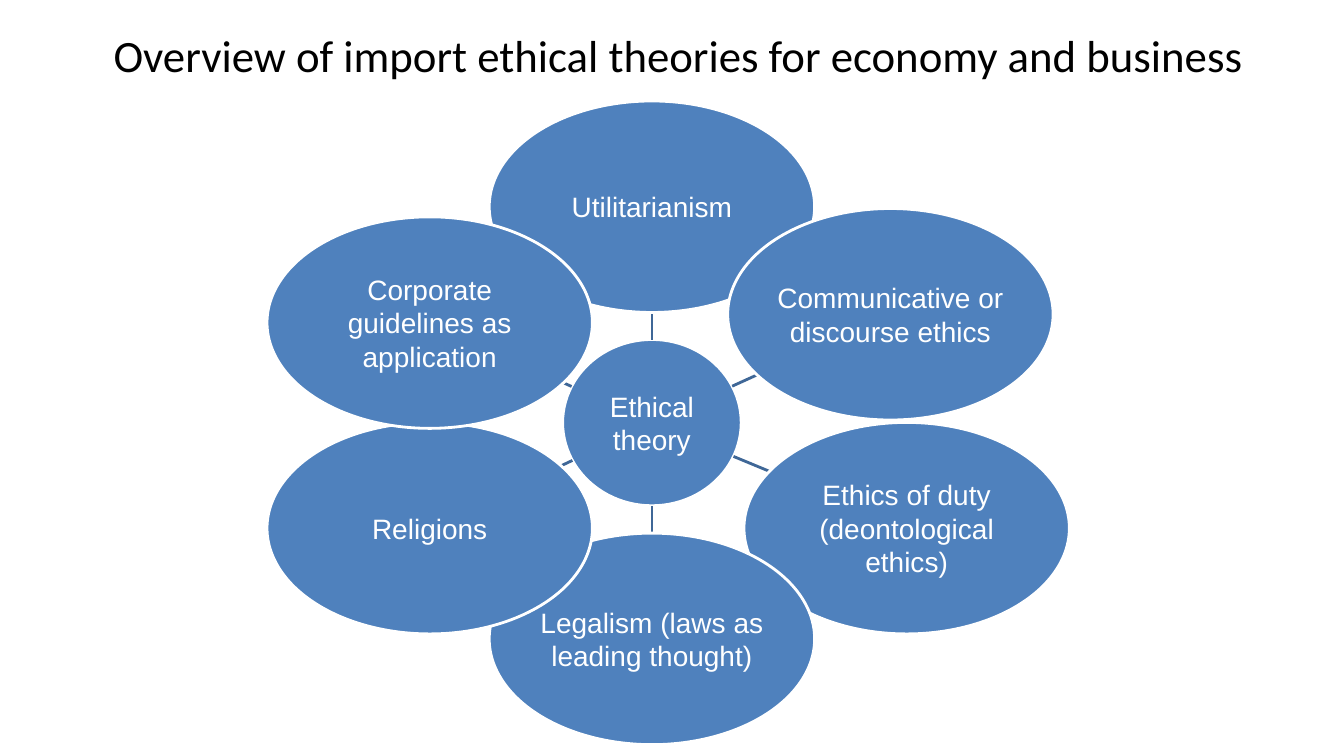
from math import hypot

from lxml.etree import SubElement
from pptx import Presentation
from pptx.dml.color import RGBColor
from pptx.enum.shapes import MSO_CONNECTOR, MSO_SHAPE
from pptx.enum.text import MSO_ANCHOR, PP_ALIGN
from pptx.oxml.ns import qn
from pptx.util import Cm, Pt

BLACK = RGBColor(0x00, 0x00, 0x00)
WHITE = RGBColor(0xFF, 0xFF, 0xFF)
BLUE = RGBColor(0x4F, 0x81, 0xBD)
SPOKE_BLUE = RGBColor(0x3F, 0x67, 0x97)

HUB_X, HUB_Y = 16.43, 10.65
HUB_W, HUB_H = 4.5, 4.19
THEORY_W, THEORY_H = 8.2, 5.33

THEORIES = [
    ("Utilitarianism", 16.43, 5.21),
    ("Communicative or discourse ethics", 22.44, 7.92),
    ("Ethics of duty (deontological ethics)", 22.85, 13.31),
    ("Legalism (laws as leading thought)", 16.43, 16.1),
    ("Religions", 10.83, 13.31),
    ("Corporate guidelines as application", 10.83, 8.13),
]


def write(frame, text, font, size, color):
    frame.word_wrap = True
    frame.vertical_anchor = MSO_ANCHOR.MIDDLE
    paragraph = frame.paragraphs[0]
    paragraph.alignment = PP_ALIGN.CENTER
    run = paragraph.add_run()
    run.text = text
    run.font.name = font
    run.font.size = Pt(size)
    run.font.color.rgb = color


def add_ellipse(text, x, y, width, height):
    ellipse = slide.shapes.add_shape(
        MSO_SHAPE.OVAL, Cm(x - width / 2), Cm(y - height / 2), Cm(width), Cm(height))
    ellipse.shadow.inherit = False
    ellipse.fill.solid()
    ellipse.fill.fore_color.rgb = BLUE
    ellipse.line.color.rgb = WHITE
    ellipse.line.width = Pt(2)
    frame = ellipse.text_frame
    frame.margin_left = frame.margin_right = Cm(0.03)
    frame.margin_top = frame.margin_bottom = Cm(0.03)
    write(frame, text, "Arial", 20, WHITE)


prs = Presentation()
prs.slide_width = Cm(33.87)
prs.slide_height = Cm(19.05)
slide = prs.slides.add_slide(prs.slide_layouts[6])

title = slide.shapes.add_textbox(Cm(2.36), Cm(0.2), Cm(29.49), Cm(2.34))
write(title.text_frame, "Overview of import ethical theories for economy and business",
      "Calibri", 32, BLACK)

add_ellipse("Ethical theory", HUB_X, HUB_Y, HUB_W, HUB_H)

for theory, x, y in THEORIES:
    dx, dy = x - HUB_X, y - HUB_Y
    start = 1 / hypot(dx / (HUB_W / 2), dy / (HUB_H / 2))
    end = 1 - 1 / hypot(dx / (THEORY_W / 2), dy / (THEORY_H / 2))
    spoke = slide.shapes.add_connector(
        MSO_CONNECTOR.STRAIGHT,
        Cm(HUB_X + start * dx), Cm(HUB_Y + start * dy),
        Cm(HUB_X + end * dx), Cm(HUB_Y + end * dy))
    spoke.line.color.rgb = SPOKE_BLUE
    spoke.line.width = Pt(2)
    SubElement(spoke._element.spPr, qn("a:effectLst"))
    add_ellipse(theory, x, y, THEORY_W, THEORY_H)

prs.save("out.pptx")
